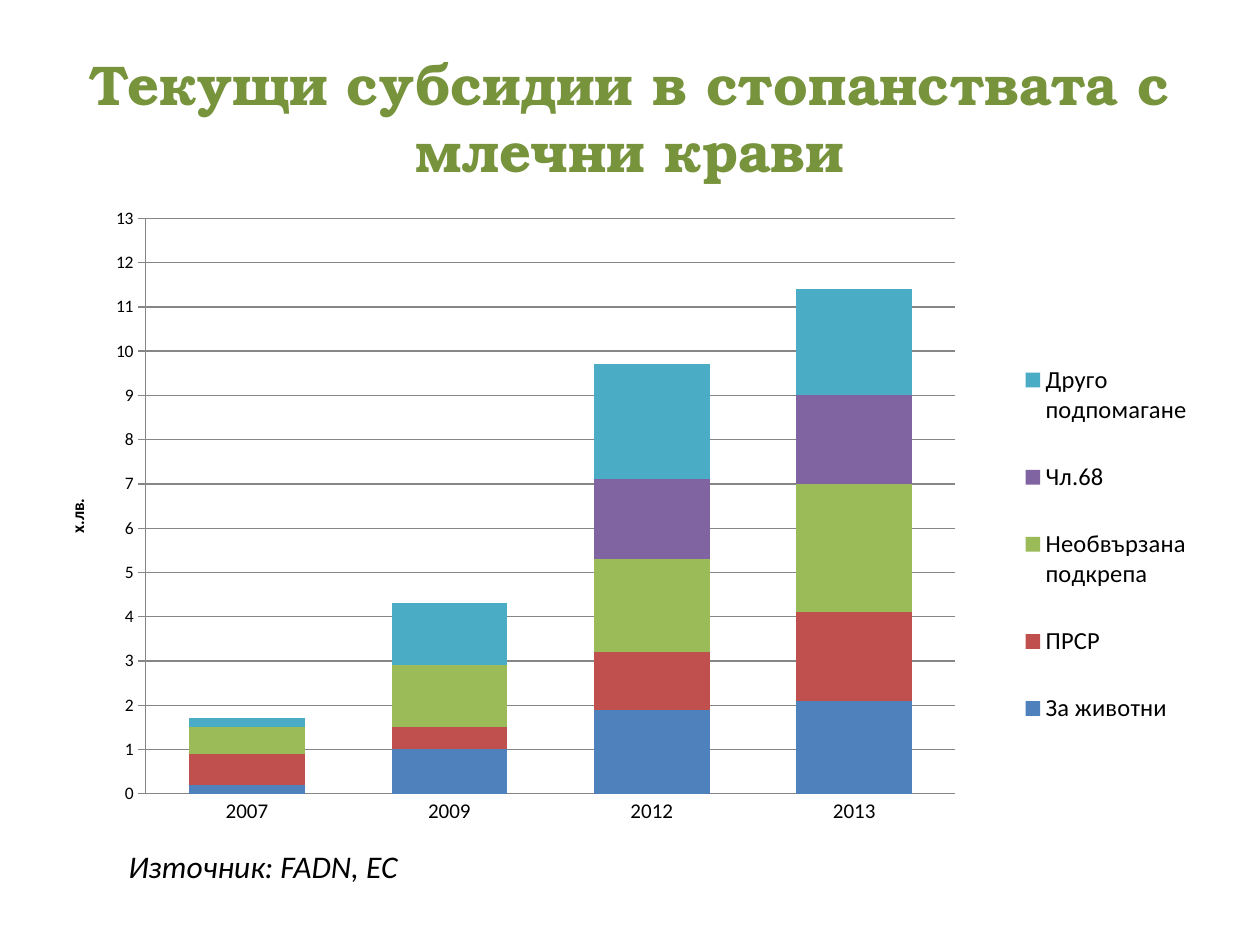
import lxml.etree
import pptx
import pptx.chart.data
import pptx.dml.color
import pptx.enum.chart
import pptx.enum.text
import pptx.oxml
import pptx.oxml.ns
import pptx.util

Inches = pptx.util.Inches
Pt = pptx.util.Pt
qn = pptx.oxml.ns.qn

COLORS = {
    "title": "77933C",
    "text": "000000",
    "line": "868686",
    "За животни": "4F81BD",
    "ПРСР": "C0504D",
    "Необвързана подкрепа": "9BBB59",
    "Чл.68": "8064A2",
    "Друго подпомагане": "4BACC6",
}
YEARS = ["2007", "2009", "2012", "2013"]
SUBSIDIES = {
    "За животни": [0.2, 1, 1.9, 2.1],
    "ПРСР": [0.7, 0.5, 1.3, 2],
    "Необвързана подкрепа": [0.6, 1.4, 2.1, 2.9],
    "Чл.68": [0, 0, 1.8, 2],
    "Друго подпомагане": [0.2, 1.4, 2.6, 2.4],
}
PLOT_AREA = {"layoutTarget": "inner", "xMode": "edge", "yMode": "edge",
             "x": 0.073, "y": 0.03, "w": 0.714, "h": 0.892}
LEGEND_AREA = {"xMode": "edge", "yMode": "edge",
               "x": 0.84, "y": 0.2, "w": 0.16, "h": 0.67}


def rgb(name):
    return pptx.dml.color.RGBColor.from_string(COLORS[name])


def apply(target, values):
    """Set every attribute named in values on target."""
    for name, value in values.items():
        setattr(target, name, value)


def place(shape, left, top, width, height):
    apply(shape, {"left": Inches(left), "top": Inches(top),
                  "width": Inches(width), "height": Inches(height)})


def pin(part, position, settings):
    """Give a chart part a manual layout, in fractions of the chart frame."""
    for old in part.findall(qn("c:layout")):
        part.remove(old)
    layout = pptx.oxml.parse_xml(
        '<c:layout xmlns:c="http://schemas.openxmlformats.org/drawingml/2006/chart"/>')
    manual = lxml.etree.SubElement(layout, qn("c:manualLayout"))
    for name, value in settings.items():
        lxml.etree.SubElement(manual, qn(f"c:{name}")).set("val", str(value))
    part.insert(position, layout)


class SlideBuilder:
    """Holds the text style and the current page."""

    font_name = "Calibri"

    def __init__(self, page):
        self.page = page

    def style(self, font, size, color="text", **values):
        apply(font, {"name": self.font_name, "size": Pt(size), **values})
        font.color.rgb = rgb(color)

    def title(self, text, *box):
        title = self.page.shapes.title
        place(title, *box)
        frame = title.text_frame
        apply(frame, {"text": text, "word_wrap": True,
                      "vertical_anchor": pptx.enum.text.MSO_ANCHOR.MIDDLE})
        para = frame.paragraphs[0]
        para.alignment = pptx.enum.text.PP_ALIGN.CENTER
        self.style(para.runs[0].font, 32, "title", name="TeX Gyre Bonum", bold=True)

    def note(self, text, *box):
        frame = self.page.shapes.add_textbox(*map(Inches, box)).text_frame
        apply(frame, {"text": text, "word_wrap": True,
                      "auto_size": pptx.enum.text.MSO_AUTO_SIZE.SHAPE_TO_FIT_TEXT})
        self.style(frame.paragraphs[0].runs[0].font, 18, italic=True)

    def stacked_chart(self, categories, series, unit, *box):
        kinds = pptx.enum.chart
        data = pptx.chart.data.CategoryChartData()
        data.categories = categories
        for name, values in series.items():
            data.add_series(name, values)
        chart = self.page.shapes.add_chart(
            kinds.XL_CHART_TYPE.COLUMN_STACKED, *map(Inches, box), data).chart
        apply(chart, {"has_title": False, "has_legend": True})
        self.style(chart.font, 10)
        apply(chart.plots[0], {"gap_width": 75, "overlap": 100,
                               "vary_by_categories": False})
        for bars in chart.plots[0].series:
            bars.format.fill.solid()
            bars.format.fill.fore_color.rgb = rgb(bars.name)
        apply(chart.legend, {"position": kinds.XL_LEGEND_POSITION.RIGHT,
                             "include_in_layout": False})
        self.style(chart.legend.font, 14)
        self.axes(chart, unit)
        chart_xml = chart._chartSpace.chart
        pin(chart_xml.plotArea, 0, PLOT_AREA)
        legend_xml = chart_xml.find(qn("c:legend"))
        after_position = len(legend_xml.findall(qn("c:legendPos")))
        pin(legend_xml, after_position, LEGEND_AREA)

    def axes(self, chart, unit):
        marks = pptx.enum.chart.XL_TICK_MARK
        years, amounts = chart.category_axis, chart.value_axis
        apply(years, {"major_tick_mark": marks.NONE, "minor_tick_mark": marks.NONE})
        apply(amounts, {"minimum_scale": 0, "maximum_scale": 13, "major_unit": 1,
                        "major_tick_mark": marks.CROSS, "minor_tick_mark": marks.NONE,
                        "has_major_gridlines": True, "has_title": True})
        apply(amounts.tick_labels, {"number_format": "General",
                                    "number_format_is_linked": False})
        self.style(years.tick_labels.font, 12)
        self.style(amounts.tick_labels.font, 10)
        for part in (years, amounts, amounts.major_gridlines):
            part.format.line.width = Pt(0.75)
            part.format.line.color.rgb = rgb("line")
        frame = amounts.axis_title.text_frame
        frame.text = unit
        self.style(frame.paragraphs[0].runs[0].font, 10, bold=True)


def main():
    deck = pptx.Presentation()
    apply(deck, {"slide_width": Inches(10), "slide_height": Inches(7.5)})
    title_only = deck.slide_layouts[5]
    builder = SlideBuilder(deck.slides.add_slide(title_only))
    builder.title("Текущи субсидии в стопанствата с млечни крави", 0.5, 0.3, 9, 1.25)
    builder.stacked_chart(YEARS, SUBSIDIES, "х.лв.", 0.5, 1.58, 9, 5.12)
    builder.note("Източник: FADN, EC", 0.92, 6.67, 2.67, 0.4)
    deck.save("out.pptx")


if __name__ == "__main__":
    main()
